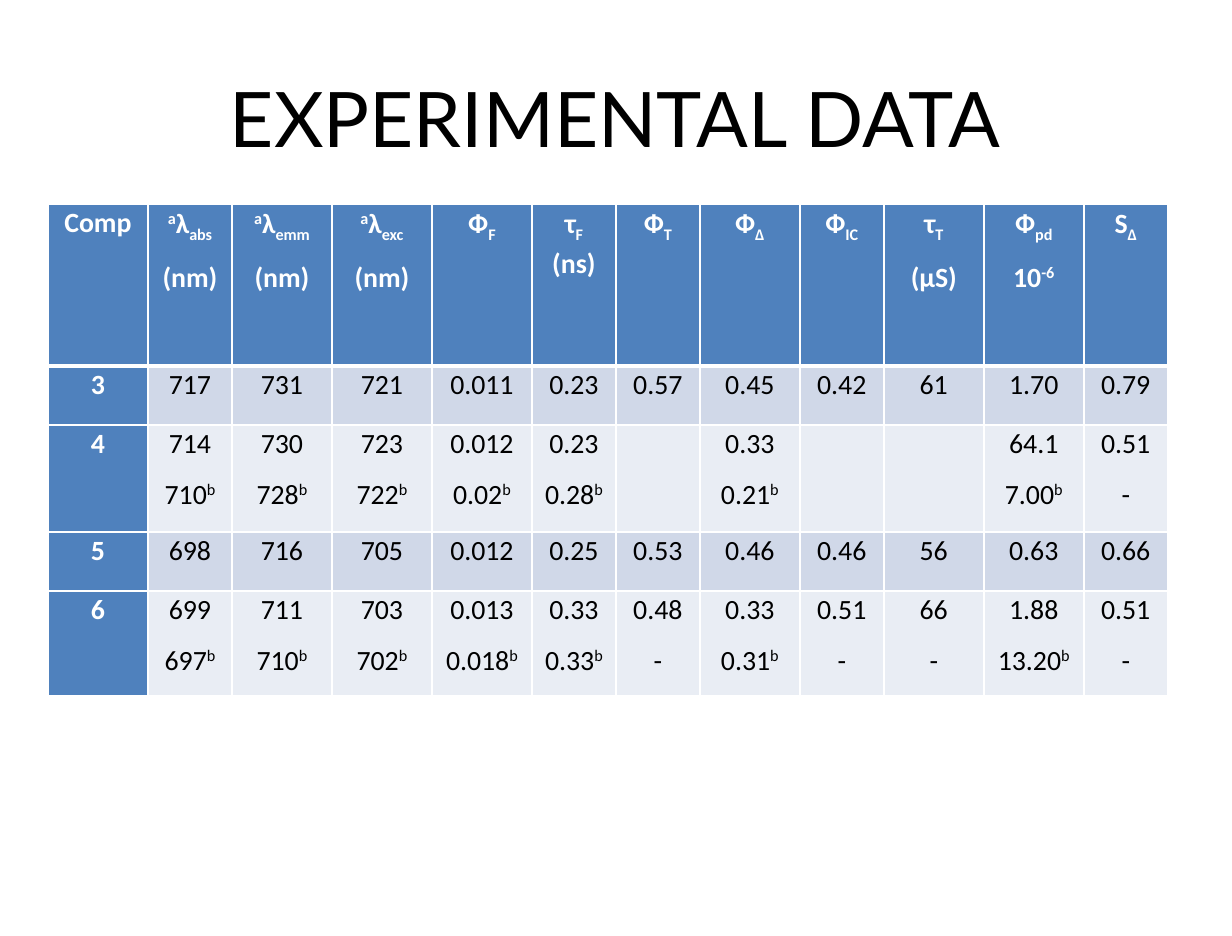
from lxml import etree
from pptx import Presentation
from pptx.dml.color import RGBColor
from pptx.enum import text
from pptx.oxml import ns
from pptx.util import Pt

PX = 7298  # EMU in one px
WHITE, BLACK, BLUE = "FFFFFF", "000000", "4F81BD"
BANDS = ["D0D8E8", "E9EDF4"]
SHIFTS = {"^": "30000", "_": "-25000"}

# A line is split into spans by "|"; ^ raises a span and _ lowers it.
HEADER = ["Comp", "^a|λ|_abs\n(nm)", "^a|λ|_emm\n(nm)", "^a|λ|_exc\n(nm)",
          "Ф|_F", "τ|_F| (ns)", "Ф|_T", "Ф|_∆", "Ф|_IC",
          "τ|_T\n(µS)", "Ф|_pd\n10|^-6", "S|_∆"]
COMPOUNDS = [
    ["3", "717", "731", "721", "0.011", "0.23", "0.57", "0.45", "0.42",
     "61", "1.70", "0.79"],
    ["4", "714\n710|^b", "730\n728|^b", "723\n722|^b", "0.012\n0.02|^b",
     "0.23\n0.28|^b", "", "0.33\n0.21|^b", "", "", "64.1\n7.00|^b", "0.51\n-"],
    ["5", "698", "716", "705", "0.012", "0.25", "0.53", "0.46", "0.46",
     "56", "0.63", "0.66"],
    ["6", "699\n697|^b", "711\n710|^b", "703\n702|^b", "0.013\n0.018|^b",
     "0.33\n0.33|^b", "0.48\n-", "0.33\n0.31|^b", "0.51\n-", "66\n-",
     "1.88\n13.20|^b", "0.51\n-"],
]
ROWS = [HEADER] + COMPOUNDS
WIDE, NARROW = 100, 84
WIDTHS = [WIDE, NARROW, WIDE, WIDE, WIDE, NARROW, NARROW, WIDE, NARROW,
          WIDE, WIDE, NARROW]
HEIGHTS = [162, 59, 107, 59, 105]


def color(code):
    return RGBColor.from_string(code)


def add_border(cell, side, points):
    """Draw a white line on one side (L, R, T or B) of a table cell."""
    line = etree.SubElement(cell._tc.get_or_add_tcPr(), ns.qn(f"a:ln{side}"),
                            w=str(Pt(points)))
    fill = etree.SubElement(line, ns.qn("a:solidFill"))
    etree.SubElement(fill, ns.qn("a:srgbClr"), val=WHITE)


deck = Presentation()
deck.slide_width, deck.slide_height = 1232 * PX, 936 * PX
page = deck.slides.add_slide(deck.slide_layouts[5])

title = page.shapes.title
title.left, title.top, title.width, title.height = (
    61 * PX, 38 * PX, 1109 * PX, 157 * PX)
title.text_frame.text = "EXPERIMENTAL DATA"
title.text_frame.vertical_anchor = text.MSO_ANCHOR.MIDDLE
heading = title.text_frame.paragraphs[0]
heading.alignment = text.PP_ALIGN.CENTER
heading.runs[0].font.size = Pt(44)
heading.runs[0].font.name = "Lato"
heading.runs[0].font.color.rgb = color(BLACK)

table = page.shapes.add_table(len(ROWS), len(WIDTHS), 48 * PX, 204 * PX,
                              sum(WIDTHS) * PX, sum(HEIGHTS) * PX).table
for column, width in zip(table.columns, WIDTHS):
    column.width = width * PX
for row, height in zip(table.rows, HEIGHTS):
    row.height = height * PX

for r, values in enumerate(ROWS):
    for c, value in enumerate(values):
        cell = table.cell(r, c)
        is_head = r == 0 or c == 0
        for side in "LRTB":
            under_header = (r, side) in [(0, "B"), (1, "T")]
            add_border(cell, side, 3 if under_header else 1)
        cell.fill.solid()
        cell.fill.fore_color.rgb = color(BLUE if is_head else BANDS[(r - 1) % 2])
        cell.margin_left = cell.margin_right = 9 * PX
        cell.margin_top = cell.margin_bottom = 0
        cell.text_frame.text = value
        for para in cell.text_frame.paragraphs:
            pieces = para.text.split("|")
            para.clear()
            para.alignment = text.PP_ALIGN.CENTER
            para.line_spacing = 1.07
            para.space_after = Pt(8)
            for piece in filter(None, pieces):
                span = para.add_run()
                span.text = piece.lstrip("^_")
                span.font.size = Pt(16)
                span.font.name = "Calibri"
                span.font.bold = is_head
                span.font.color.rgb = color(WHITE if is_head else BLACK)
                if piece[0] in SHIFTS:
                    span.font._element.set("baseline", SHIFTS[piece[0]])

deck.save("out.pptx")
